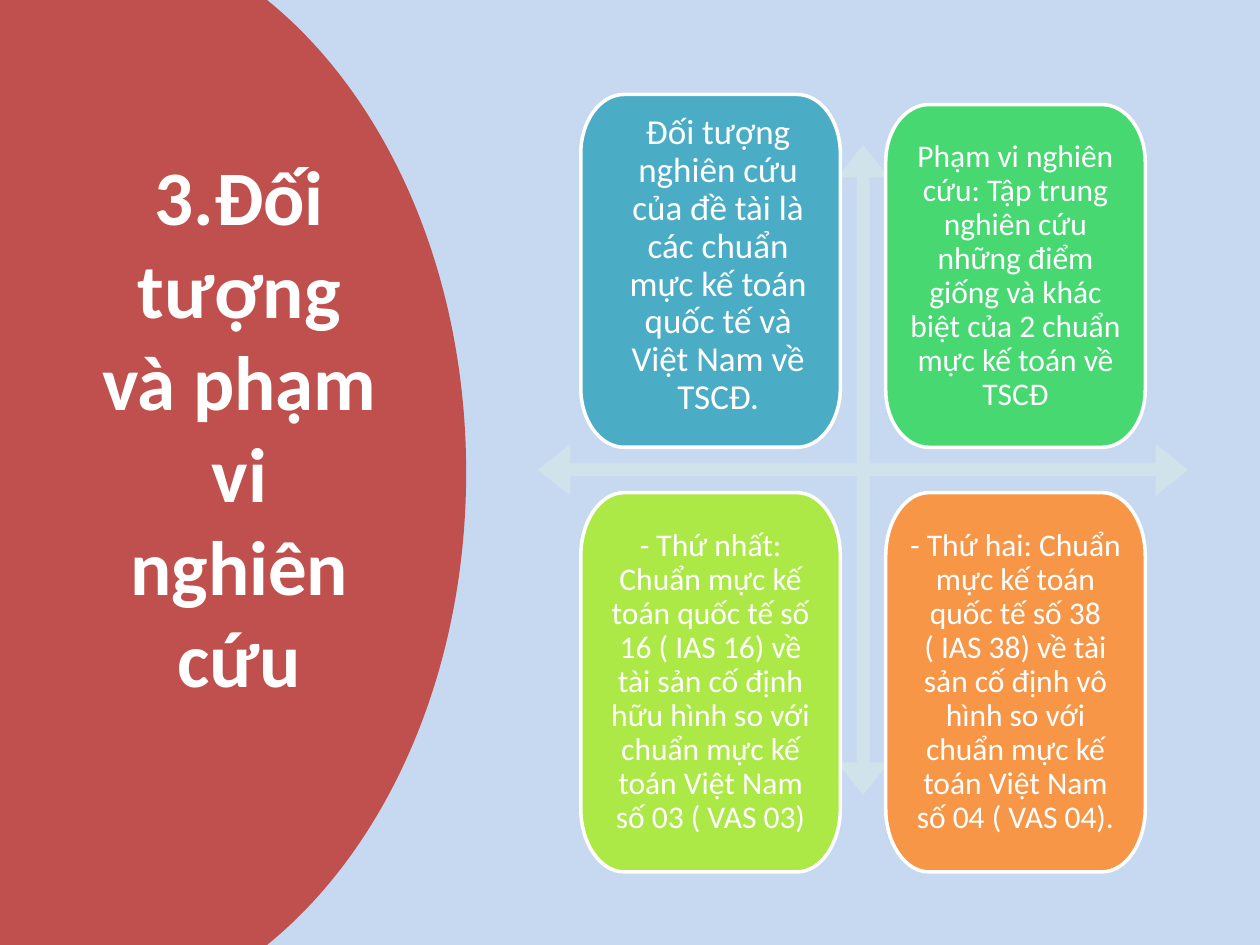
from lxml import etree
from pptx import Presentation, util as u
from pptx.dml.color import RGBColor
from pptx.enum import shapes, text
from pptx.oxml.ns import qn

WIDTH, HEIGHT = 10, 7.5
FONT, WHITE = "Calibri", "FFFFFF"
BACKGROUND, RED, ARROWS = "C6D9F1", "C0504D", "D0E3EA"

TITLE = "3.Đối tượng và phạm vi nghiên cứu"
COLUMNS = (4.61, 7.03)
CARD_WIDTH = 2.06
CORNER = 1 / 6  # share of the card's width and height
# column, top, height, fill, text size, left indent, anchor, wording
CARDS = [
    (0, 0.75, 2.8, "4BACC6", 20, 0.12, text.MSO_ANCHOR.TOP,
     "Đối tượng nghiên cứu của đề tài là các chuẩn mực kế toán quốc tế và "
     "Việt Nam về TSCĐ."),
    (1, 0.83, 2.72, "47D872", 18, 0, text.MSO_ANCHOR.MIDDLE,
     "Phạm vi nghiên cứu: Tập trung nghiên cứu những điểm giống và khác biệt "
     "của 2 chuẩn mực kế toán về TSCĐ"),
    (0, 3.91, 3.01, "ACE946", 18, 0, text.MSO_ANCHOR.MIDDLE,
     "- Thứ nhất: Chuẩn mực kế toán quốc tế số 16 ( IAS 16) về tài sản cố định "
     "hữu hình so với chuẩn mực kế toán Việt Nam số 03 ( VAS 03)"),
    (1, 3.91, 3.01, "F79646", 18, 0, text.MSO_ANCHOR.MIDDLE,
     "- Thứ hai: Chuẩn mực kế toán quốc tế số 38 ( IAS 38) về tài sản cố định "
     "vô hình so với chuẩn mực kế toán Việt Nam số 04 ( VAS 04)."),
]


def color(value):
    return RGBColor.from_string(value)


def rounded_outline(left, top, width, height):
    """Segments of a rectangle whose corners are quarter ellipses."""
    right, bottom = left + width, top + height
    rx, ry = width * CORNER, height * CORNER
    kx, ky = rx * 0.45, ry * 0.45
    return [
        [(left, top + ry)],
        [(left, top + ky), (left + kx, top), (left + rx, top)],
        [(right - rx, top)],
        [(right - kx, top), (right, top + ky), (right, top + ry)],
        [(right, bottom - ry)],
        [(right, bottom - ky), (right - kx, bottom), (right - rx, bottom)],
        [(left + rx, bottom)],
        [(left + kx, bottom), (left, bottom - ky), (left, bottom - ry)],
    ]


def paint(shape, fill, line=None):
    shape.shadow.inherit = False
    shape.fill.solid()
    shape.fill.fore_color.rgb = color(fill)
    if line:
        shape.line.color.rgb = color(line)
        shape.line.width = u.Pt(2)
    else:
        shape.line.fill.background()


def add_outline(slide, segments, fill, line=None):
    """Draw segments: one point is a straight line, three points are a curve."""
    segments = [[(u.Inches(x), u.Inches(y)) for x, y in points] for points in segments]
    ends = [points[-1] for points in segments]
    builder = slide.shapes.build_freeform(*ends[0], scale=1.0)
    builder.add_line_segments(ends[1:], close=True)
    outline = builder.convert_to_shape()
    for step, points in zip(outline.element.iter(qn("a:lnTo")), segments[1:]):
        if len(points) == 3:
            step.tag = qn("a:cubicBezTo")
            for place, (x, y) in enumerate(points[:2]):
                control = etree.Element(qn("a:pt"), x=str(x - outline.left),
                                        y=str(y - outline.top))
                step.insert(place, control)
    paint(outline, fill, line)
    return outline


def write(shape, wording, size, anchor, insets, spacing, bold=False):
    frame = shape.text_frame
    frame.word_wrap = True
    frame.vertical_anchor = anchor
    (frame.margin_left, frame.margin_top,
     frame.margin_right, frame.margin_bottom) = map(u.Inches, insets)
    paragraph = frame.paragraphs[0]
    paragraph.text = wording
    paragraph.alignment = text.PP_ALIGN.CENTER
    paragraph.line_spacing = spacing
    font = paragraph.font
    font.name, font.size, font.bold = FONT, u.Pt(size), bold
    font.color.rgb = color(WHITE)


def main():
    deck = Presentation()
    deck.slide_width, deck.slide_height = u.Inches(WIDTH), u.Inches(HEIGHT)
    slide = deck.slides.add_slide(deck.slide_layouts[6])
    slide.background.fill.solid()
    slide.background.fill.fore_color.rgb = color(BACKGROUND)

    add_outline(slide, [
        [(0, 0)],
        [(2.12, 0)],
        [(3.07, 0.77), (3.7, 2.16), (3.7, HEIGHT / 2)],
        [(3.7, HEIGHT - 2.16), (3.07, HEIGHT - 0.77), (2.12, HEIGHT)],
        [(0, HEIGHT)],
    ], RED)

    title = slide.shapes.add_textbox(*map(u.Inches, (0.69, 0.7, 2.42, 6.09)))
    write(title, TITLE, 44, text.MSO_ANCHOR.MIDDLE, (0.1, 0.05, 0.1, 0.78), 1.0,
          bold=True)

    arrows = slide.shapes.add_shape(shapes.MSO_SHAPE.QUAD_ARROW,
                                    *map(u.Inches, (4.27, 1.15, 5.16, 5.16)))
    paint(arrows, ARROWS)
    for index, share in enumerate((0.02, 0.04, 0.05)):
        arrows.adjustments[index] = share

    for column, top, height, fill, size, indent, anchor, wording in CARDS:
        segments = rounded_outline(COLUMNS[column], top, CARD_WIDTH, height)
        card = add_outline(slide, segments, fill, WHITE)
        write(card, wording, size, anchor, (0.16 + indent, 0.16, 0.16, 0.16), 0.9)

    deck.save("out.pptx")


if __name__ == "__main__":
    main()
